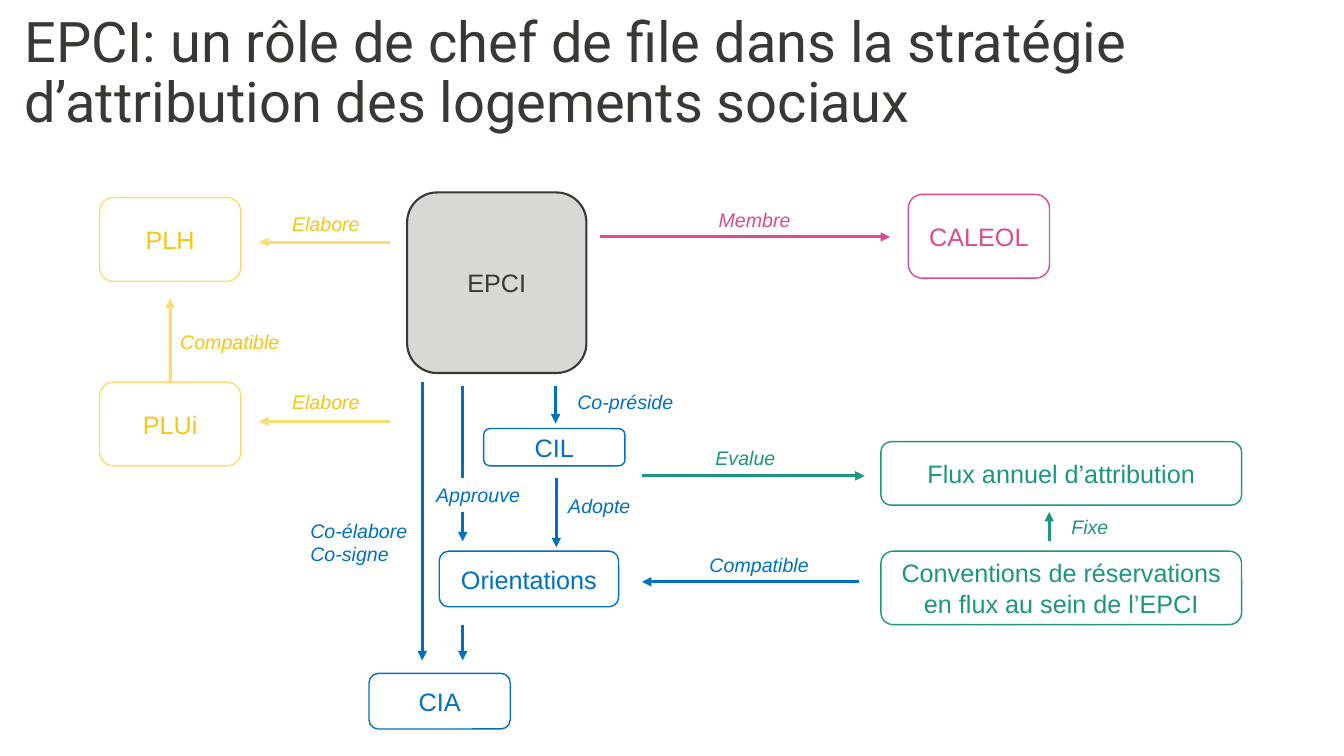
from lxml import etree
from pptx import Presentation
from pptx.dml.color import RGBColor
from pptx.enum.shapes import MSO_CONNECTOR, MSO_SHAPE
from pptx.enum.text import MSO_ANCHOR, MSO_AUTO_SIZE, PP_ALIGN
from pptx.oxml.ns import qn
from pptx.util import Cm, Pt

STRAIGHT = MSO_CONNECTOR.STRAIGHT
ROUNDED = MSO_SHAPE.ROUNDED_RECTANGLE
MIDDLE = MSO_ANCHOR.MIDDLE
NO_AUTOFIT = MSO_AUTO_SIZE.NONE
LEFT, CENTER = PP_ALIGN.LEFT, PP_ALIGN.CENTER
TOP_SIDE = 0
TITLE_ONLY = 5

DARK = RGBColor(0x38, 0x39, 0x34)
GREY = RGBColor(0xD8, 0xD9, 0xD5)
WHITE = RGBColor(0xFF, 0xFF, 0xFF)
GOLD = RGBColor(0xF6, 0xC6, 0x14)
PALE_GOLD = RGBColor(0xFA, 0xDD, 0x72)
BLUE = RGBColor(0x00, 0x70, 0xC0)
PINK = RGBColor(0xDB, 0x4B, 0x93)
GREEN = RGBColor(0x1D, 0x96, 0x7F)


def write(frame, text, font="Arial", size=18, color=DARK, italic=False,
          align=LEFT, spacing=None):
    """Fill a text frame, one paragraph for each line of text."""
    frame.word_wrap = True
    for index, line in enumerate(text.split("\n")):
        para = frame.add_paragraph() if index else frame.paragraphs[0]
        para.alignment = align
        if spacing:
            para.line_spacing = spacing
        span = para.add_run()
        span.text = line
        span.font.name = font
        span.font.size = Pt(size)
        span.font.italic = italic
        span.font.color.rgb = color


class Diagram:
    """Draws boxes, arrows and labels on one page, in centimetres."""

    node_width = 3.56
    label_width = 4.01
    label_line = 0.6
    label_margin = 0.26
    arrow_weight = 2.25

    def __init__(self, page):
        self.page = page

    def title(self, text, left, top, width, height):
        box = self.page.shapes.title
        box.left, box.top = Cm(left), Cm(top)
        box.width, box.height = Cm(width), Cm(height)
        frame = box.text_frame
        frame.auto_size = NO_AUTOFIT
        frame.vertical_anchor = MIDDLE
        frame.margin_left = frame.margin_right = 0
        write(frame, text, font="Roboto", size=40, spacing=0.9)

    def node(self, text, left, top, height, color, width=node_width,
             outline=None, fill=None, weight=1):
        box = self.page.shapes.add_shape(
            ROUNDED, Cm(left), Cm(top), Cm(width), Cm(height))
        box.shadow.inherit = False
        if fill:
            box.fill.solid()
            box.fill.fore_color.rgb = fill
        else:
            box.fill.background()
        box.line.color.rgb = outline or color
        box.line.width = Pt(weight)
        box.text_frame.vertical_anchor = MIDDLE
        write(box.text_frame, text, color=color, align=CENTER)
        return box

    def arrow(self, start, end, color):
        line = self.page.shapes.add_connector(
            STRAIGHT, *(Cm(value) for value in start + end))
        line.line.color.rgb = color
        line.line.width = Pt(self.arrow_weight)
        etree.SubElement(line.line._get_or_add_ln(), qn("a:tailEnd"), type="triangle")
        etree.SubElement(line._element.spPr, qn("a:effectLst"))
        return line

    def label(self, text, left, top, color, width=label_width, fill=None):
        height = self.label_line * (text.count("\n") + 1) + self.label_margin
        box = self.page.shapes.add_textbox(Cm(left), Cm(top), Cm(width), Cm(height))
        if fill:
            box.fill.solid()
            box.fill.fore_color.rgb = fill
        write(box.text_frame, text, size=14, color=color, italic=True)


def main():
    deck = Presentation()
    deck.slide_width, deck.slide_height = Cm(33.87), Cm(19.05)
    page = deck.slides.add_slide(deck.slide_layouts[TITLE_ONLY])
    diagram = Diagram(page)

    diagram.title("EPCI: un rôle de chef de file dans la stratégie "
                  "d’attribution des logements sociaux", 0.61, 1.37, 32, 1.02)

    diagram.node("PLH", 2.51, 4.98, 2.11, GOLD, outline=PALE_GOLD)
    plui = diagram.node("PLUi", 2.51, 9.63, 2.11, GOLD, outline=PALE_GOLD)
    diagram.node("CIL", 12.19, 10.8, 0.94, BLUE)
    diagram.node("Orientations", 11.07, 13.89, 1.4, BLUE, width=4.52)
    diagram.node("CIA", 9.3, 16.97, 1.4, BLUE)
    diagram.node("CALEOL", 22.89, 4.9, 2.11, PINK)
    diagram.node("Flux annuel d’attribution", 22.2, 11.13, 1.6, GREEN, width=9.09)
    diagram.node("Conventions de réservations en flux au sein de l’EPCI",
                 22.2, 13.89, 1.85, GREEN, width=9.09)
    diagram.node("EPCI", 10.26, 4.85, 4.55, DARK, width=4.52, fill=GREY, weight=1.5)

    compatible = diagram.arrow((4.29, 9.63), (4.29, 7.52), PALE_GOLD)
    compatible.begin_connect(plui, TOP_SIDE)
    for start, end, color in (
        ((9.83, 6.1), (6.53, 6.1), PALE_GOLD),
        ((9.83, 10.62), (6.53, 10.62), PALE_GOLD),
        ((15.11, 5.97), (22.43, 5.97), PINK),
        ((10.64, 9.63), (10.64, 16.64), BLUE),
        ((11.66, 15.75), (11.66, 16.64), BLUE),
        ((11.66, 9.73), (11.66, 13.64), BLUE),
        ((14.02, 12.04), (14.02, 13.79), BLUE),
        ((14, 9.73), (14, 10.67), BLUE),
        ((16.18, 11.99), (21.79, 11.99), GREEN),
        ((21.64, 14.66), (16.18, 14.66), BLUE),
        ((26.44, 13.64), (26.44, 12.9), GREEN),
    ):
        diagram.arrow(start, end, color)

    for text, left, top, color in (
        ("Membre", 17.86, 5.11, PINK),
        ("Evalue", 17.78, 11.1, GREEN),
        ("Compatible", 17.63, 13.82, BLUE),
        ("Fixe", 26.75, 12.85, GREEN),
        ("Co-élabore\nCo-signe", 7.57, 12.95, BLUE),
        ("Elabore", 7.11, 5.21, GOLD),
        ("Elabore", 7.11, 9.7, GOLD),
        ("Compatible", 4.29, 8.2, GOLD),
    ):
        diagram.label(text, left, top, color)
    diagram.label("Approuve", 10.74, 12.04, BLUE, width=2.64, fill=WHITE)
    diagram.label("Adopte", 14.07, 12.32, BLUE, fill=WHITE)
    diagram.label("Co-préside", 14.3, 9.7, BLUE, fill=WHITE)

    deck.save("out.pptx")


if __name__ == "__main__":
    main()
